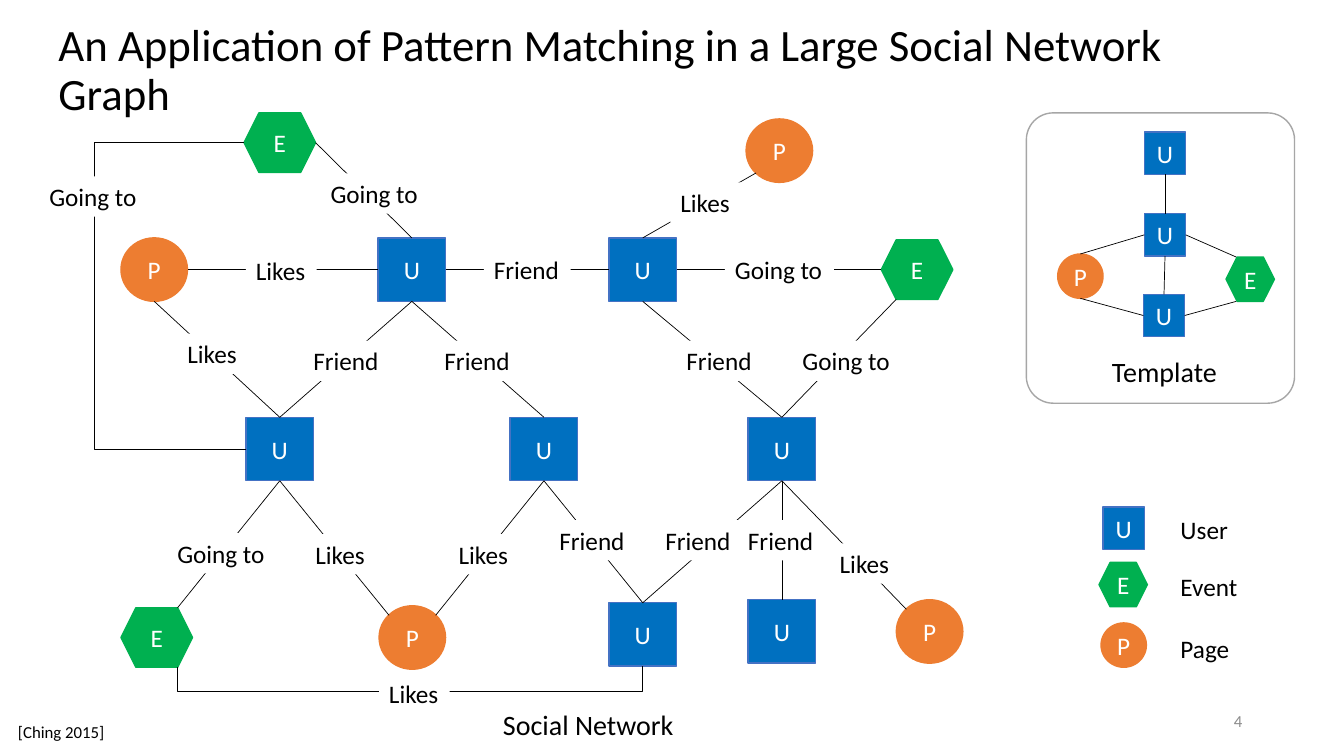
"""Build the slide on pattern matching in a social network graph."""
from lxml import etree
from pptx import Presentation
from pptx.dml.color import RGBColor
from pptx.enum import shapes, text
from pptx.oxml import ns
from pptx.util import Inches, Pt

BLACK, WHITE, GREY = "000000", "FFFFFF", "8C8C8C"
MIDDLE = text.MSO_ANCHOR.MIDDLE
KINDS = {
    "U": (shapes.MSO_SHAPE.RECTANGLE, "0070C0", "4472C4", (0.67, 0.63), (0.41, 0.42)),
    "E": (shapes.MSO_SHAPE.HEXAGON, "00B050", "00B050", (0.71, 0.59), (0.48, 0.44)),
    "P": (shapes.MSO_SHAPE.OVAL, "ED7D31", "ED7D31", (0.66, 0.63), (0.45, 0.44)),
}
SIDES = {
    "top": (0.5, 0), "bottom": (0.5, 1), "left": (0, 0.5), "right": (1, 0.5),
    "hex top left": (0.21, 0), "hex top right": (0.79, 0),
    "hex bottom left": (0.21, 1), "hex bottom right": (0.79, 1),
    "oval top left": (0.15, 0.15), "oval top right": (0.85, 0.15),
    "oval bottom left": (0.15, 0.85),
}
LABEL_WIDTHS = {"Friend": 0.86, "Going to": 1.08, "Likes": 0.7}
NODES = {
    "user a": ("U", 3.75, 2.36), "user b": ("U", 6.04, 2.36),
    "user c": ("U", 2.44, 4.14), "user d": ("U", 5.06, 4.14),
    "user e": ("U", 7.42, 4.14), "user f": ("U", 6.04, 5.98),
    "user g": ("U", 7.42, 5.95),
    "page a": ("P", 1.2, 2.36), "page b": ("P", 7.4, 1.18),
    "page c": ("P", 3.76, 6.01), "page d": ("P", 8.89, 5.95),
    "event a": ("E", 2.42, 1.12), "event b": ("E", 8.74, 2.38),
    "event c": ("E", 1.2, 6.03),
}
SMALL_NODES = {
    "first": ("U", 11.35, 1.31), "second": ("U", 11.35, 2.12),
    "third": ("U", 11.34, 2.92), "shared page": ("P", 10.49, 2.52),
    "shared event": ("E", 12.16, 2.55),
    "User": ("U", 10.94, 5.03), "Event": ("E", 10.9, 5.58),
    "Page": ("P", 10.92, 6.18),
}
EDGES = [
    ("user a", "right", "user b", "left", "Friend", 4.8, 2.47),
    ("user a", "bottom", "user d", "top", "Friend", 4.31, 3.38),
    ("user d", "bottom", "user f", "top", "Friend", 5.45, 5.16),
    ("user b", "bottom", "user e", "top", "Friend", 6.71, 3.38),
    ("user e", "bottom", "user f", "top", "Friend", 6.5, 5.16),
    ("user a", "bottom", "user c", "top", "Friend", 3.01, 3.38),
    ("user g", "top", "user e", "bottom", "Friend", 7.32, 5.16),
    ("user a", "top", "event a", "right", "Going to", 3.18, 1.72),
    ("user a", "left", "page a", "right", "Likes", 2.44, 2.48),
    ("user c", "top", "page a", "bottom", "Likes", 1.76, 3.31),
    ("user b", "right", "event b", "left", "Going to", 7.19, 2.47),
    ("event b", "hex bottom left", "user e", "top", "Going to", 7.86, 3.38),
    ("page d", "oval top left", "user e", "bottom", "Likes", 8.23, 5.39),
    ("event c", "hex top right", "user c", "bottom", "Going to", 1.66, 5.29),
    ("page b", "oval bottom left", "user b", "top", "Likes", 6.65, 1.81),
    ("page c", "oval top left", "user c", "bottom", "Likes", 3.03, 5.3),
    ("page c", "oval top right", "user d", "bottom", "Likes", 4.45, 5.3),
    ("first", "bottom", "second", "top", None, 0, 0),
    ("second", "bottom", "third", "top", None, 0, 0),
    ("second", "left", "shared page", "top", None, 0, 0),
    ("shared page", "bottom", "third", "left", None, 0, 0),
    ("second", "right", "shared event", "hex top left", None, 0, 0),
    ("shared event", "hex bottom left", "third", "right", None, 0, 0),
]
ELBOWS = [
    (2.42, 1.41, 0.02, 3.05, 180, 75, "Going to", 0.39, 1.75),
    (4.06, 4.31, 0.01, 4.61, 90, 25, "Likes", 3.76, 6.68),
]
CAPTIONS = [
    ("Social Network", 4.89, 6.97, 1.91, 0.44, 20),
    ("Template", 10.93, 3.47, 1.25, 0.44, 20),
    ("User", 11.61, 5.05, 0.68, 0.4, 18),
    ("Event", 11.61, 5.62, 0.77, 0.4, 18),
    ("Page", 11.61, 6.23, 0.69, 0.4, 18),
    ("[Ching 2015]", 0.08, 7.11, 1.07, 0.3, 12),
]


def color(value):
    """Turn a hex string into a colour."""
    return RGBColor.from_string(value)


def write(box, words, size, ink, align=text.PP_ALIGN.LEFT):
    """Write one run of text into a shape."""
    para = box.text_frame.paragraphs[0]
    para.alignment = align
    span = para.add_run()
    span.text = words
    span.font.size = Pt(size)
    span.font.name = "Calibri"
    span.font.color.rgb = color(ink)


deck = Presentation()
deck.slide_width, deck.slide_height = Inches(13.33), Inches(7.5)
page = deck.slides.add_slide(deck.slide_layouts[5])

title = page.shapes.title
title.left, title.top = Inches(0.48), Inches(0.34)
title.width, title.height = Inches(12.34), Inches(0.74)
title.text_frame.auto_size = text.MSO_AUTO_SIZE.NONE
title.text_frame.vertical_anchor = MIDDLE
title.text_frame.paragraphs[0].line_spacing = 0.9
write(title, "An Application of Pattern Matching in a Large Social Network Graph", 32, BLACK)

number = page.shapes.add_textbox(Inches(9.42), Inches(6.95), Inches(3), Inches(0.4))
number.text_frame.vertical_anchor = MIDDLE
write(number, "4", 12, GREY, text.PP_ALIGN.RIGHT)

frame = page.shapes.add_shape(
    shapes.MSO_SHAPE.ROUNDED_RECTANGLE, Inches(10.18), Inches(1.12), Inches(2.66), Inches(2.88))
frame.adjustments[0] = 0.1
frame.shadow.inherit = False
frame.fill.background()
frame.line.color.rgb = color("A6A6A6")
frame.line.width = Pt(1)

anchors = {}
for group, size_index in ((NODES, 3), (SMALL_NODES, 4)):
    for name, (letter, left, top) in group.items():
        outline, fill, border = KINDS[letter][:3]
        width, height = KINDS[letter][size_index]
        node = page.shapes.add_shape(
            outline, Inches(left), Inches(top), Inches(width), Inches(height))
        node.shadow.inherit = False
        node.fill.solid()
        node.fill.fore_color.rgb = color(fill)
        node.line.color.rgb = color(border)
        node.line.width = Pt(1)
        node.text_frame.word_wrap = False
        node.text_frame.vertical_anchor = MIDDLE
        write(node, letter, 18, WHITE, text.PP_ALIGN.CENTER)
        for side, (across, down) in SIDES.items():
            anchors[name, side] = (left + across * width, top + down * height)

links = []
for start, start_side, end, end_side, *label in EDGES:
    points = anchors[start, start_side] + anchors[end, end_side]
    links.append((shapes.MSO_CONNECTOR.STRAIGHT, points, 0, 0, label))
for left, top, width, height, turn, bend, *label in ELBOWS:
    points = (left, top, left + width, top + height)
    links.append((shapes.MSO_CONNECTOR.ELBOW, points, turn, bend, label))

for style, points, turn, bend, (words, left, top) in links:
    link = page.shapes.add_connector(style, *[Inches(value) for value in points])
    link.line.color.rgb = color(BLACK)
    link.line.width = Pt(0.5)
    properties = link._element.spPr
    etree.SubElement(properties, ns.qn("a:effectLst"))
    if bend:
        properties.find(ns.qn("a:xfrm")).set("rot", str(turn * 60000))
        guides = properties.find(ns.qn("a:prstGeom")).find(ns.qn("a:avLst"))
        etree.SubElement(guides, ns.qn("a:gd"), name="adj1", fmla=f"val {bend * 100000}")
    if words:
        tag = page.shapes.add_textbox(
            Inches(left), Inches(top), Inches(LABEL_WIDTHS[words]), Inches(0.4))
        tag.fill.solid()
        tag.fill.fore_color.rgb = color(WHITE)
        tag.text_frame.word_wrap = False
        write(tag, words, 18, BLACK)

for words, left, top, width, height, size in CAPTIONS:
    caption = page.shapes.add_textbox(Inches(left), Inches(top), Inches(width), Inches(height))
    caption.text_frame.word_wrap = False
    write(caption, words, size, BLACK)

deck.save("out.pptx")
